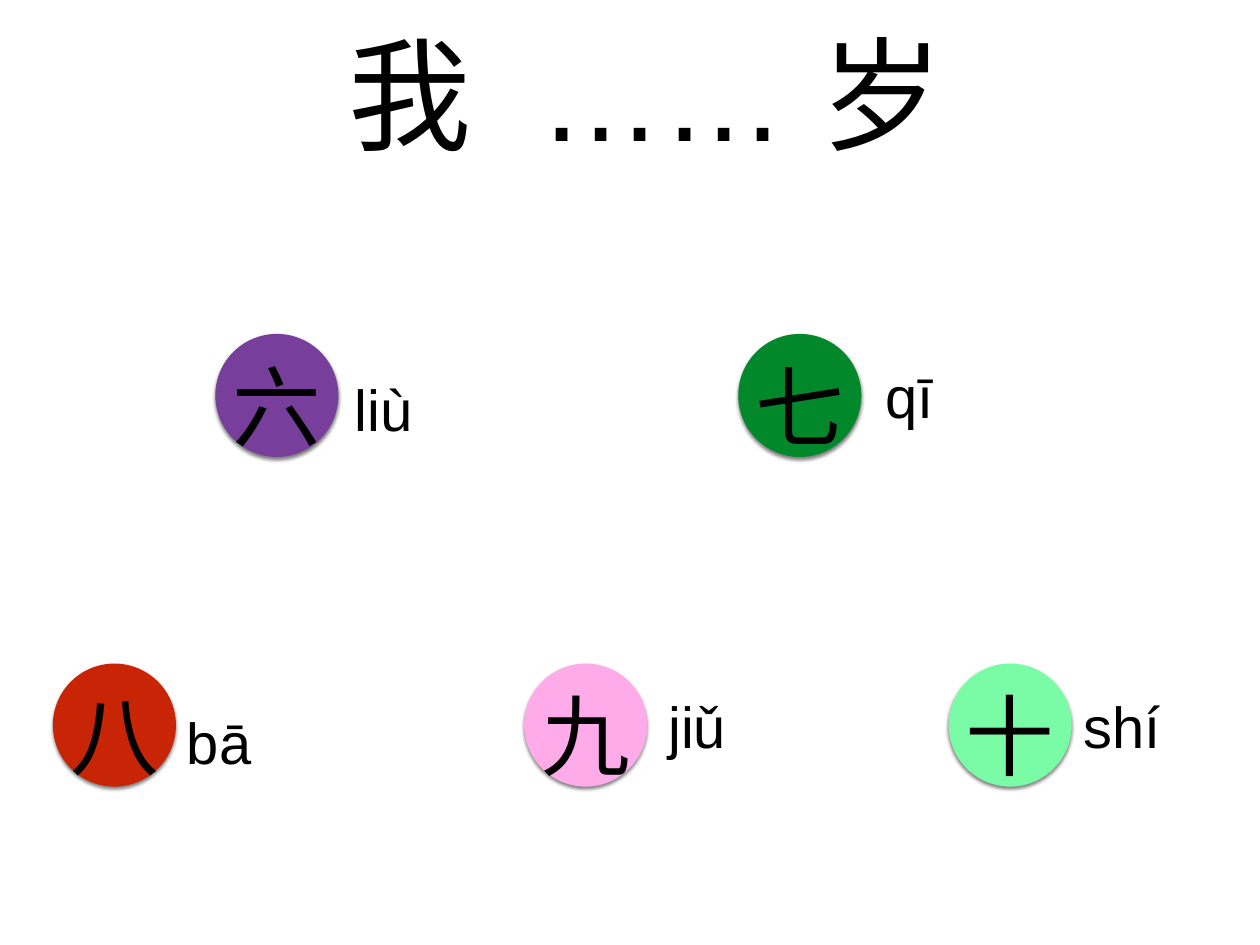
from lxml import etree
from pptx import Presentation
from pptx.dml.color import RGBColor
from pptx.enum.shapes import MSO_SHAPE
from pptx.enum.text import MSO_ANCHOR, MSO_AUTO_SIZE, PP_ALIGN
from pptx.oxml import parse_xml
from pptx.oxml.ns import nsdecls, qn
from pptx.util import Pt

COLORS = {
    "text": "000000",
    "purple": "773F9B",
    "green": "00882B",
    "red": "C82506",
    "pink": "FFAAE9",
    "mint": "7AFBA5",
}
LATIN_FONT = "Arial"
CHINESE_FONT = "Noto Sans CJK SC"
DIAMETER = 100
UPPER_ROW, LOWER_ROW = 271.4, 539.3

# character, pinyin, colour, circle left and top, pinyin left, top and width
NUMBERS = [
    ("六", "liù", "purple", 175, UPPER_ROW, 283.7, 300.2, 56),
    ("七", "qī", "green", 600, UPPER_ROW, 712.8, 289.4, 53),
    ("八", "bā", "red", 43, LOWER_ROW, 147.6, 570.2, 61),
    ("九", "jiǔ", "pink", 426, LOWER_ROW, 538.6, 557.3, 56),
    ("十", "shí", "mint", 771, LOWER_ROW, 876.2, 557.3, 72),
]


def add_text(left, top, width, height, texts, size, font_name, inset, anchor):
    """Add a one-line text box with one run for each text; return its runs."""
    box = slide.shapes.add_textbox(Pt(left), Pt(top), Pt(width), Pt(height))
    frame = box.text_frame
    frame.word_wrap = False
    frame.auto_size = MSO_AUTO_SIZE.SHAPE_TO_FIT_TEXT
    frame.vertical_anchor = anchor
    frame.margin_left = frame.margin_right = Pt(inset)
    frame.margin_top = frame.margin_bottom = Pt(inset)
    paragraph = frame.paragraphs[0]
    paragraph.alignment = PP_ALIGN.CENTER
    for text in texts:
        run = paragraph.add_run()
        run.text = text
        run.font.size = Pt(size)
        run.font.name = font_name
        run.font.color.rgb = RGBColor.from_string(COLORS["text"])
        east_asian = etree.SubElement(run.font._element, qn("a:ea"))
        east_asian.set("typeface", font_name)
    return paragraph.runs


presentation = Presentation()
presentation.slide_width = Pt(1024)
presentation.slide_height = Pt(768)
slide = presentation.slides.add_slide(presentation.slide_layouts[6])

for character, pinyin, color, left, top, *_ in NUMBERS:
    circle = slide.shapes.add_shape(
        MSO_SHAPE.OVAL, Pt(left), Pt(top), Pt(DIAMETER), Pt(DIAMETER))
    circle.fill.solid()
    circle.fill.fore_color.rgb = RGBColor.from_string(COLORS[color])
    circle.line.fill.background()
    circle._element.spPr.append(parse_xml(
        f'<a:effectLst {nsdecls("a")}>'
        f'<a:outerShdw blurRad="{Pt(3)}" dist="{Pt(2)}" dir="5400000" rotWithShape="0">'
        f'<a:srgbClr val="{COLORS["text"]}"><a:alpha val="50000"/></a:srgbClr>'
        '</a:outerShdw></a:effectLst>'))

for character, pinyin, color, left, top, *_ in NUMBERS:
    add_text(left + 10, top + 10.8, 80, 79.2, [character], 72,
             CHINESE_FONT, 3.6, MSO_ANCHOR.TOP)

title_runs = add_text(278.6, 10.8, 492.5, 128.2, ["我", " ", "…… 岁"], 100,
                      LATIN_FONT, 4, MSO_ANCHOR.MIDDLE)
# Widen the gap after the first character by one more space width
title_runs[1].font._element.set("spc", "2780")

for character, pinyin, color, _, _, left, top, width in NUMBERS:
    add_text(left, top, width, 64, [pinyin], 47, LATIN_FONT, 4, MSO_ANCHOR.MIDDLE)

presentation.save("out.pptx")
